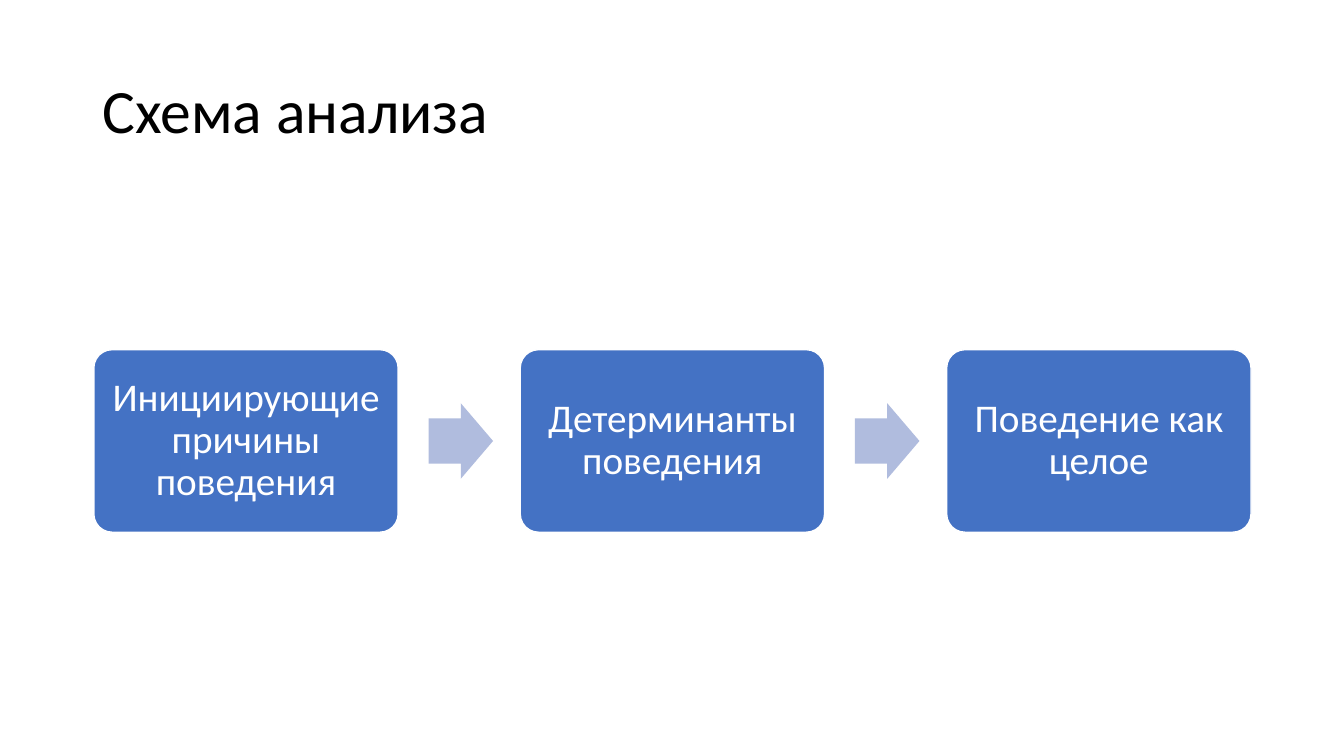
from dataclasses import dataclass

from pptx import Presentation
from pptx.dml.color import RGBColor
from pptx.enum.shapes import MSO_SHAPE
from pptx.enum.text import MSO_ANCHOR, PP_ALIGN
from pptx.shapes.autoshape import Shape
from pptx.slide import Slide
from pptx.text.text import TextFrame
from pptx.util import Pt


@dataclass(frozen=True)
class Theme:
    """Colours, font and type sizes."""
    font: str = "Calibri"
    title_size: float = 44
    step_size: float = 28
    ink: str = "000000"
    white: str = "FFFFFF"
    step_fill: str = "4472C4"
    arrow_fill: str = "B0BCDE"


@dataclass(frozen=True)
class Box:
    """A rectangle in points."""
    x: float
    y: float
    w: float
    h: float

    def shifted(self, dx: float) -> "Box":
        """Return the same rectangle moved to the right."""
        return Box(self.x + dx, self.y, self.w, self.h)

    def lengths(self) -> tuple[Pt, Pt, Pt, Pt]:
        """Return left, top, width and height."""
        return Pt(self.x), Pt(self.y), Pt(self.w), Pt(self.h)


THEME = Theme()
TITLE_BOX = Box(66, 28.8, 828, 104.4)
STEP_BOX = Box(67, 249.8, 217.4, 130.4)
ARROW_BOX = Box(306.1, 288, 46.1, 54)
PITCH = 304.6
STEP_INSET = 8.3
STEPS = ("Инициирующие причины поведения", "Детерминанты поведения", "Поведение как целое")


def write(tf: TextFrame, text: str, size: float, color: str, align: PP_ALIGN) -> None:
    """Set and format one vertically centred paragraph."""
    tf.word_wrap = True
    tf.vertical_anchor = MSO_ANCHOR.MIDDLE
    tf.text = text
    p = tf.paragraphs[0]
    p.alignment = align
    p.line_spacing = 0.9
    r = p.runs[0]
    r.font.name = THEME.font
    r.font.size = Pt(size)
    r.font.color.rgb = RGBColor.from_string(color)


def add_filled(s: Slide, kind: MSO_SHAPE, box: Box, fill: str) -> Shape:
    """Add a flat shape without an outline."""
    sp = s.shapes.add_shape(kind, *box.lengths())
    sp.shadow.inherit = False
    sp.fill.solid()
    sp.fill.fore_color.rgb = RGBColor.from_string(fill)
    sp.line.fill.background()
    return sp


def add_step(s: Slide, text: str, box: Box) -> None:
    """Add one rounded step with its label."""
    sp = add_filled(s, MSO_SHAPE.ROUNDED_RECTANGLE, box, THEME.step_fill)
    sp.adjustments[0] = 0.1
    sp.line.color.rgb = RGBColor.from_string(THEME.white)
    sp.line.width = Pt(1)
    tf = sp.text_frame
    tf.margin_left = tf.margin_right = tf.margin_top = tf.margin_bottom = Pt(STEP_INSET)
    write(tf, text, THEME.step_size, THEME.white, PP_ALIGN.CENTER)


def add_arrow(s: Slide, box: Box) -> None:
    """Add one block arrow between two steps."""
    sp = add_filled(s, MSO_SHAPE.RIGHT_ARROW, box, THEME.arrow_fill)
    sp.adjustments[0] = 0.6
    sp.adjustments[1] = 0.5


def main() -> None:
    """Build and save the slide."""
    prs = Presentation()
    prs.slide_width, prs.slide_height = Pt(960), Pt(540)
    s = prs.slides.add_slide(prs.slide_layouts[6])
    title = s.shapes.add_textbox(*TITLE_BOX.lengths())
    write(title.text_frame, "Схема анализа", THEME.title_size, THEME.ink, PP_ALIGN.LEFT)
    for i, text in enumerate(STEPS):
        if i:
            add_arrow(s, ARROW_BOX.shifted((i - 1) * PITCH))
        add_step(s, text, STEP_BOX.shifted(i * PITCH))
    prs.save("out.pptx")


if __name__ == "__main__":
    main()
